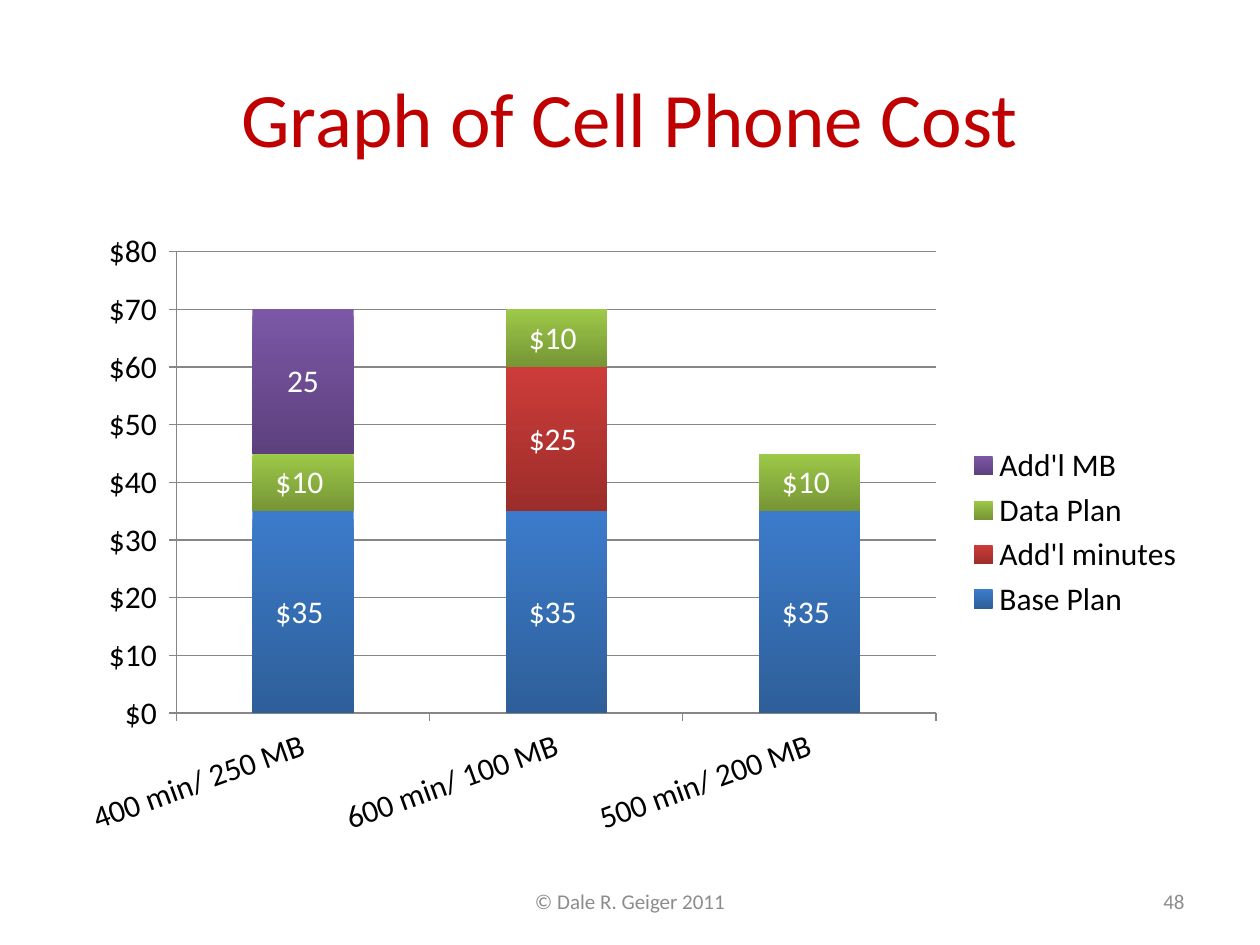
from lxml.etree import SubElement
from pptx import Presentation
from pptx.chart.data import CategoryChartData
from pptx.dml.color import RGBColor
from pptx.enum.chart import XL_CHART_TYPE as ChartType, XL_LEGEND_POSITION as LegendPosition
from pptx.enum.chart import XL_TICK_MARK as TickMark
from pptx.enum.text import MSO_ANCHOR as Anchor, PP_ALIGN as Align
from pptx.oxml.ns import qn
from pptx.util import Pt

FONT = "Calibri"
DOLLARS = '"$"#,##0_);[Red]\\("$"#,##0\\)'
GRID_GRAY = "868686"
PLANS = ["400 min/ 250 MB", "600 min/ 100 MB", "500 min/ 200 MB"]
# name, monthly cost per plan, number format, top and bottom colour
COSTS = [
    ("Base Plan", (35, 35, 35), DOLLARS, "3C7BCB", "2E5F99"),
    ("Add'l minutes", (None, 25, None), DOLLARS, "CD3C39", "9B2D2A"),
    ("Data Plan", (10, 10, 10), DOLLARS, "9DC949", "769535"),
    ("Add'l MB", (25, None, None), "General", "7C57A6", "5D417E"),
]


def rgb(hex_color):
    return RGBColor.from_string(hex_color)


def style_font(font, size, color):
    font.name = FONT
    font.size = Pt(size)
    font.color.rgb = rgb(color)


def write_text(shape, text, size, color, align):
    frame = shape.text_frame
    frame.text = text
    frame.word_wrap = True
    frame.vertical_anchor = Anchor.MIDDLE
    line = frame.paragraphs[0]
    line.alignment = align
    style_font(line.runs[0].font, size, color)


def add_title(slide, text):
    title = slide.shapes.title
    title.left, title.top, title.width, title.height = Pt(36), Pt(21.6), Pt(648), Pt(90)
    write_text(title, text, 44, "C00000", Align.CENTER)


def add_footer(slide, text, left, width, align):
    footer = slide.shapes.add_textbox(Pt(left), Pt(500.5), Pt(width), Pt(28.75))
    write_text(footer, text, 12, "8C8C8C", align)


def fix_plot_area(chart, **fractions):
    """Place the inner plot area, given as fractions of the chart."""
    plot_area = chart._chartSpace.chart.plotArea
    layout = plot_area.find(qn("c:layout"))
    if layout is None:
        layout = SubElement(plot_area, qn("c:layout"))
        plot_area.insert(0, layout)
    manual = SubElement(layout, qn("c:manualLayout"))
    settings = {"layoutTarget": "inner", "xMode": "edge", "yMode": "edge", **fractions}
    for tag, value in settings.items():
        SubElement(manual, qn(f"c:{tag}")).set("val", str(value))


def style_axes(chart):
    costs, plans = chart.value_axis, chart.category_axis
    costs.minimum_scale, costs.maximum_scale, costs.major_unit = 0, 80, 10
    costs.tick_labels.number_format = DOLLARS
    costs.tick_labels.number_format_is_linked = False
    for axis in (costs, plans):
        axis.major_tick_mark = TickMark.OUTSIDE
        style_font(axis.tick_labels.font, 18, "000000")
    for ruled in (costs, plans, costs.major_gridlines):
        ruled.format.line.color.rgb = rgb(GRID_GRAY)
        ruled.format.line.width = Pt(0.75)
    label_body = plans._element.find(qn("c:txPr")).find(qn("a:bodyPr"))
    label_body.set("rot", str(-20 * 60000))


def style_series(series, number_format, top_color, bottom_color):
    fill = series.format.fill
    fill.gradient()
    fill.gradient_angle = 270
    for stop, color in zip(fill.gradient_stops, (top_color, bottom_color)):
        stop.color.rgb = rgb(color)
    labels = series.data_labels
    labels.show_value = True
    labels.number_format = number_format
    labels.number_format_is_linked = False
    style_font(labels.font, 18, "FFFFFF")


def add_cost_chart(slide):
    data = CategoryChartData()
    data.categories = PLANS
    for name, values, number_format, *_ in COSTS:
        data.add_series(name, values, number_format)
    chart = slide.shapes.add_chart(
        ChartType.COLUMN_STACKED, Pt(36), Pt(126), Pt(648), Pt(356.4), data
    ).chart
    chart.has_title = False
    style_font(chart.font, 18, "000000")
    chart.has_legend = True
    chart.legend.position = LegendPosition.RIGHT
    chart.legend.include_in_layout = False
    style_font(chart.legend.font, 18, "000000")

    plot = chart.plots[0]
    plot.gap_width, plot.overlap, plot.vary_by_categories = 150, 100, False
    for series, (_, _, *look) in zip(plot.series, COSTS):
        style_series(series, *look)
    style_axes(chart)
    fix_plot_area(chart, x=0.1, y=0.05, w=0.67, h=0.74)


def main():
    deck = Presentation()
    deck.slide_width, deck.slide_height = Pt(720), Pt(540)
    slide = deck.slides.add_slide(deck.slide_layouts[5])
    add_title(slide, "Graph of Cell Phone Cost")
    add_cost_chart(slide)
    add_footer(slide, "© Dale R. Geiger 2011", 246, 228, Align.CENTER)
    add_footer(slide, "48", 516, 168, Align.RIGHT)
    deck.save("out.pptx")


if __name__ == "__main__":
    main()
